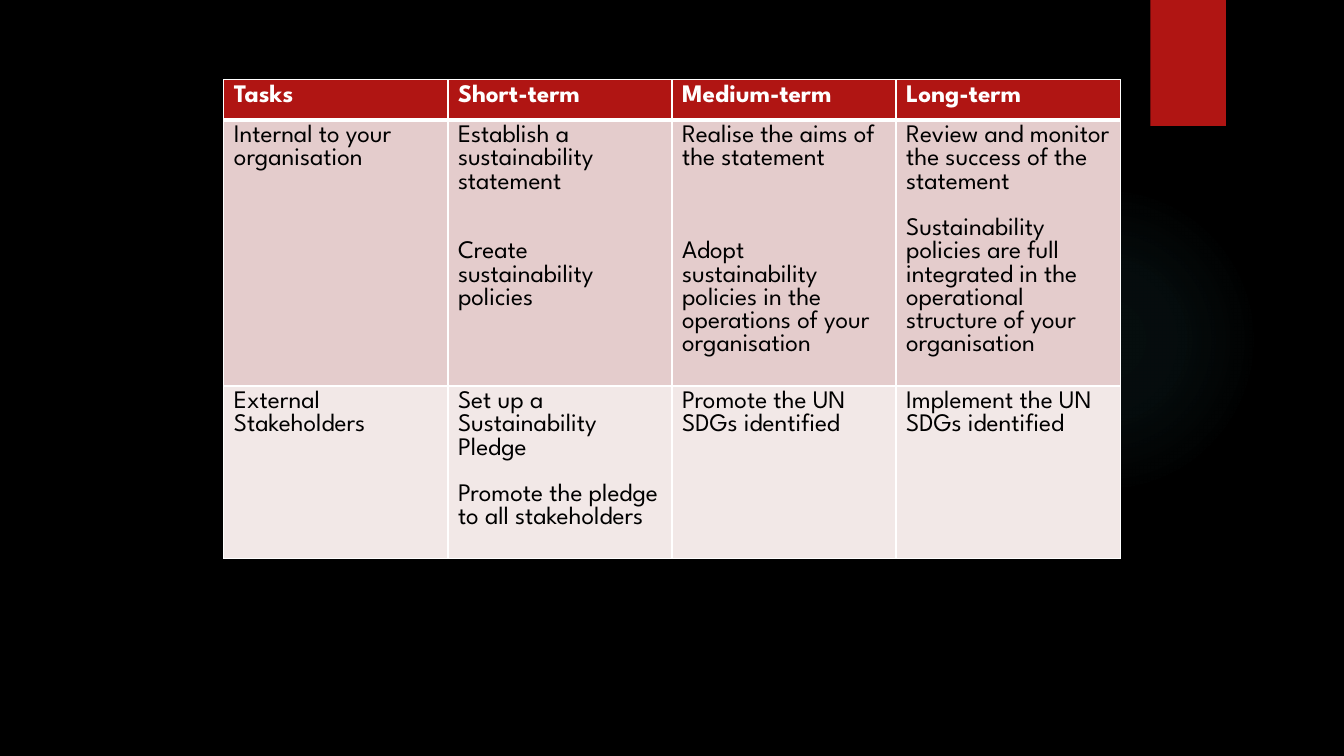
from dataclasses import dataclass

from lxml import etree
from pptx import Presentation
from pptx.dml.color import RGBColor
from pptx.enum.shapes import MSO_SHAPE
from pptx.oxml import parse_xml
from pptx.oxml.ns import nsdecls, qn
from pptx.util import Inches, Pt

OVAL, RECT = MSO_SHAPE.OVAL, MSO_SHAPE.RECTANGLE


@dataclass(frozen=True)
class Theme:
    font: str = "League Spartan"
    size: int = 18
    line: float = 16.6
    background: str = "000000"
    accent: str = "B01513"
    glow: str = "50B9C1"
    border: str = "FFFFFF"
    header_text: str = "FFFFFF"
    body_text: str = "000000"
    row_fills: tuple = ("B01513", "E4CCCC", "F2E8E7")


theme = Theme()


def add_plain_shape(kind, left, top, width, height):
    shape = s.shapes.add_shape(kind, Inches(left), Inches(top), Inches(width), Inches(height))
    shape.shadow.inherit = False
    shape.line.fill.background()
    return shape


def set_borders(cell, bottom):
    """Draw white cell borders, 1 pt except for the given bottom width."""
    tc_pr = cell._tc.get_or_add_tcPr()
    for i, (side, width) in enumerate((("L", 1), ("R", 1), ("T", 1), ("B", bottom))):
        ln = etree.Element(qn(f"a:ln{side}"), w=str(Pt(width)))
        fill = etree.SubElement(ln, qn("a:solidFill"))
        etree.SubElement(fill, qn("a:srgbClr"), val=theme.border)
        tc_pr.insert(i, ln)


prs = Presentation()
prs.slide_width, prs.slide_height = Inches(13.33), Inches(7.5)
s = prs.slides.add_slide(prs.slide_layouts[6])
s.background.fill.solid()
s.background.fill.fore_color.rgb = RGBColor.from_string(theme.background)

# Soft glow and corner tab
glow = add_plain_shape(OVAL, 9.41, 1.83, 3.08, 3.08)
stops = "".join(
    f'<a:gs pos="{pos * 1000}"><a:srgbClr val="{theme.glow}">'
    f'<a:alpha val="{alpha * 1000}"/></a:srgbClr></a:gs>'
    for pos, alpha in ((0, 7), (36, 6), (69, 0))
)
gradient = parse_xml(
    f'<a:gradFill {nsdecls("a")}><a:gsLst>{stops}</a:gsLst><a:path path="circle">'
    '<a:fillToRect l="50000" t="50000" r="50000" b="50000"/></a:path></a:gradFill>'
)
glow._element.spPr.find(qn("a:prstGeom")).addnext(gradient)

tab = add_plain_shape(RECT, 11.41, 0, 0.75, 1.25)
tab.fill.solid()
tab.fill.fore_color.rgb = RGBColor.from_string(theme.accent)

# Each cell holds paragraphs as (text, lines of space before)
rows = [
    [[("Tasks", 0)], [("Short-term", 0)], [("Medium-term", 0)], [("Long-term", 0)]],
    [
        [("Internal to your organisation", 0)],
        [("Establish a sustainability statement", 0), ("Create sustainability policies", 2)],
        [("Realise the aims of the statement", 0),
         ("Adopt sustainability policies in the operations of your organisation", 3)],
        [("Review and monitor the success of the statement", 0),
         ("Sustainability policies are full integrated in the operational "
          "structure of your organisation", 1)],
    ],
    [
        [("External Stakeholders", 0)],
        [("Set up a Sustainability Pledge", 0), ("Promote the pledge to all stakeholders", 1)],
        [("Promote the UN SDGs identified", 0)],
        [("Implement the UN SDGs identified", 0)],
    ],
]
row_heights = (0.4, 2.64, 1.71)

table = s.shapes.add_table(
    len(rows), len(rows[0]), Inches(2.22), Inches(0.79), Inches(8.89), Inches(sum(row_heights))
).table
for row, height in zip(table.rows, row_heights):
    row.height = Inches(height)

for r, row in enumerate(rows):
    header = r == 0
    text_color = theme.header_text if header else theme.body_text
    for c, paragraphs in enumerate(row):
        cell = table.cell(r, c)
        cell.fill.solid()
        cell.fill.fore_color.rgb = RGBColor.from_string(theme.row_fills[r])
        set_borders(cell, 3 if header else 1)
        tf = cell.text_frame
        for i, (text, gap) in enumerate(paragraphs):
            p = tf.add_paragraph() if i else tf.paragraphs[0]
            p.text = text
            if gap:
                p.space_before = Pt(gap * theme.line)
            p.font.name = theme.font
            p.font.size = Pt(theme.size)
            p.font.bold = header
            p.font.color.rgb = RGBColor.from_string(text_color)

prs.save("out.pptx")
